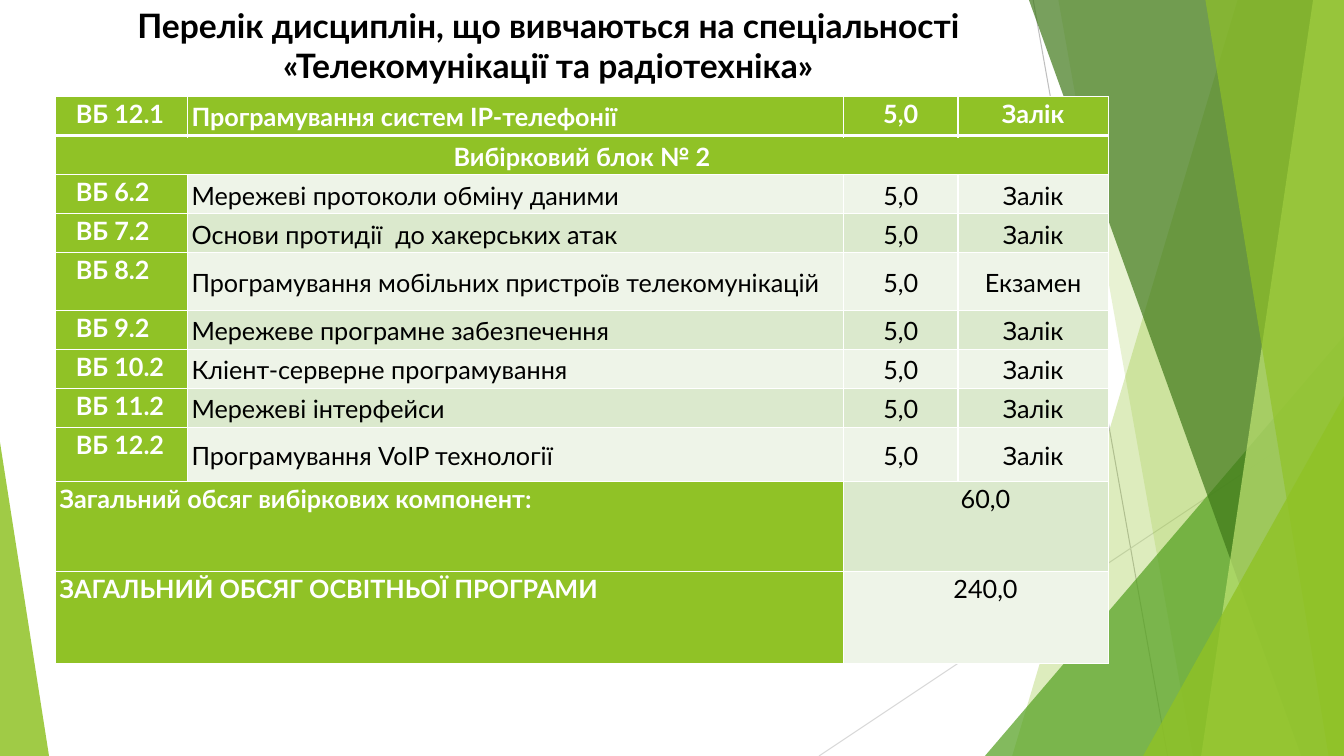
"""Build the slide listing the elective courses of the telecommunications programme."""
from lxml.etree import SubElement
from pptx import Presentation
from pptx.dml.color import RGBColor
from pptx.enum.shapes import MSO_CONNECTOR, MSO_SHAPE
from pptx.enum.text import MSO_ANCHOR, PP_ALIGN
from pptx.oxml.ns import qn
from pptx.util import Pt

COLORS = {
    "green": "90C226", "leaf": "54A021", "forest": "3F7819", "lime": "C0E474",
    "pale": "EEF4E8", "soft": "DBE9CD", "white": "FFFFFF", "black": "000000",
    "gray": "BFBFBF", "light gray": "D9D9D9",
}
WIDTH, HEIGHT = 960, 540

presentation = Presentation()
presentation.slide_width, presentation.slide_height = Pt(WIDTH), Pt(HEIGHT)
slide = presentation.slides.add_slide(presentation.slide_layouts[6])
shapes = slide.shapes


def write(paragraph, text, size, color, bold, alignment):
    """Put one formatted run into a paragraph."""
    run = paragraph.add_run()
    run.text = text
    paragraph.alignment = alignment
    for name, value in {"name": "Lato", "size": Pt(size), "bold": bold}.items():
        setattr(run.font, name, value)
    run.font.color.rgb = RGBColor.from_string(COLORS[color])


def add_border(cell, side, width):
    """Draw one white edge of a table cell."""
    line = SubElement(cell._tc.get_or_add_tcPr(), qn(f"a:ln{side}"), w=str(Pt(width)))
    fill = SubElement(line, qn("a:solidFill"))
    SubElement(fill, qn("a:srgbClr"), val=COLORS["white"])


for start_x, start_y, end_x, end_y, color in (
    (738, 0, 834, HEIGHT, "gray"),
    (WIDTH, 290, 585, HEIGHT, "light gray"),
):
    connector = shapes.add_connector(
        MSO_CONNECTOR.STRAIGHT, Pt(start_x), Pt(start_y), Pt(end_x), Pt(end_y))
    connector.line.width = Pt(0.75)
    connector.line.color.rgb = RGBColor.from_string(COLORS[color])
    SubElement(connector._element.spPr, qn("a:effectLst"))

facets = [
    ("band", (884, 723), "green", 30),
    ("band", (756, 852), "green", 20),
    ("triangle", (703.5, 240, 256.5, 1), "leaf", 72),
    ("band", (735, 929.5), "forest", 70),
    ("band", (938, 858), "lime", 70),
    ("band", (861, 949), "green", 65),
    ("triangle", (816.5, 283, 143.5, 1), "green", 80),
    ("triangle", (0, 316, 35, 0), "green", 85),
]
for kind, geometry, color, opacity in facets:
    if kind == "band":
        top_x, bottom_x = geometry
        builder = shapes.build_freeform(Pt(top_x), 0)
        builder.add_line_segments([
            (Pt(WIDTH), 0), (Pt(WIDTH), Pt(HEIGHT)), (Pt(bottom_x), Pt(HEIGHT))])
        shape = builder.convert_to_shape()
    else:
        left, top, width, apex = geometry
        shape = shapes.add_shape(
            MSO_SHAPE.ISOSCELES_TRIANGLE, Pt(left), Pt(top), Pt(width), Pt(HEIGHT - top))
        shape.adjustments[0] = apex
    shape.shadow.inherit = False
    shape.line.fill.background()
    shape.fill.solid()
    shape.fill.fore_color.rgb = RGBColor.from_string(COLORS[color])
    color_element = shape._element.spPr.find(qn("a:solidFill"))[0]
    SubElement(color_element, qn("a:alpha"), val=str(opacity * 1000))

title = shapes.add_textbox(Pt(53.3), 0, Pt(676.8), Pt(69))
title.text_frame.word_wrap = True
write(title.text_frame.paragraphs[0],
      "Перелік дисциплін, що вивчаються на спеціальності «Телекомунікації та радіотехніка»",
      24, "black", True, PP_ALIGN.CENTER)

CREDITS, PASS, EXAM = "5,0", "Залік", "Екзамен"
rows = [
    ("ВБ 12.1", "Програмування систем IP-телефонії", CREDITS, PASS),
    ("Вибірковий блок № 2", None, None, None),
    ("ВБ 6.2", "Мережеві протоколи обміну даними", CREDITS, PASS),
    ("ВБ 7.2", "Основи протидії  до хакерських атак", CREDITS, PASS),
    ("ВБ 8.2", "Програмування мобільних пристроїв телекомунікацій", CREDITS, EXAM),
    ("ВБ 9.2", "Мережеве програмне забезпечення", CREDITS, PASS),
    ("ВБ 10.2", "Кліент-серверне програмування", CREDITS, PASS),
    ("ВБ 11.2", "Мережеві інтерфейси", CREDITS, PASS),
    ("ВБ 12.2", "Програмування VoIP технології", CREDITS, PASS),
    ("Загальний обсяг вибіркових компонент:", None, "60,0", None),
    ("ЗАГАЛЬНИЙ ОБСЯГ ОСВІТНЬОЇ ПРОГРАМИ", None, "240,0", None),
]
column_widths = [94.2, 468.6, 81.8, 107.4]
row_heights = [27.9] * 4 + [41] + [27.9] * 3 + [39, 64, 66]
BLOCK_ROW, FIRST_TOTAL_ROW = 1, 9

table = shapes.add_table(len(rows), len(column_widths), Pt(39.7), Pt(69),
                         Pt(sum(column_widths)), Pt(sum(row_heights))).table
table.first_row = table.horz_banding = False
for column, width in zip(table.columns, column_widths):
    column.width = Pt(width)
for row, height in zip(table.rows, row_heights):
    row.height = Pt(height)

for row_index, texts in enumerate(rows):
    is_total = row_index >= FIRST_TOTAL_ROW
    for column_index, text in enumerate(texts):
        cell = table.cell(row_index, column_index)
        is_green = row_index <= BLOCK_ROW or column_index == 0 or (is_total and column_index == 1)
        band = "soft" if row_index % 2 else "pale"
        for side in "LRTB":
            is_thick = (row_index, side) in ((0, "B"), (BLOCK_ROW, "T"))
            add_border(cell, side, 3 if is_thick else 1)
        cell.fill.solid()
        cell.fill.fore_color.rgb = RGBColor.from_string(COLORS["green" if is_green else band])
        if text is None:
            continue

        is_top = is_total or (column_index == 0 and row_index != BLOCK_ROW) or (
            row_index == 0 and column_index > 1)
        cell_format = {
            "margin_left": Pt(2.9), "margin_right": Pt(2.9), "margin_top": 0, "margin_bottom": 0,
            "vertical_anchor": MSO_ANCHOR.TOP if is_top else MSO_ANCHOR.MIDDLE,
        }
        for name, value in cell_format.items():
            setattr(cell, name, value)

        paragraph = cell.text_frame.paragraphs[0]
        is_centered = column_index > 1 or row_index == BLOCK_ROW
        write(paragraph, text, 18, "white" if is_green else "black", is_green,
              PP_ALIGN.CENTER if is_centered else PP_ALIGN.LEFT)
        paragraph.line_spacing = 1.07
        paragraph.space_after = Pt(8)
        if is_total and column_index == 2:
            indent = 13.7
        elif column_index == 0 and not is_total and row_index != BLOCK_ROW:
            indent = 11.5
        else:
            indent = 0
        paragraph._p.get_or_add_pPr().set("marL", str(Pt(indent)))

for row_index, first, last in ((BLOCK_ROW, 0, 3), (9, 0, 1), (9, 2, 3), (10, 0, 1), (10, 2, 3)):
    table.cell(row_index, first).merge(table.cell(row_index, last))

presentation.save("out.pptx")
